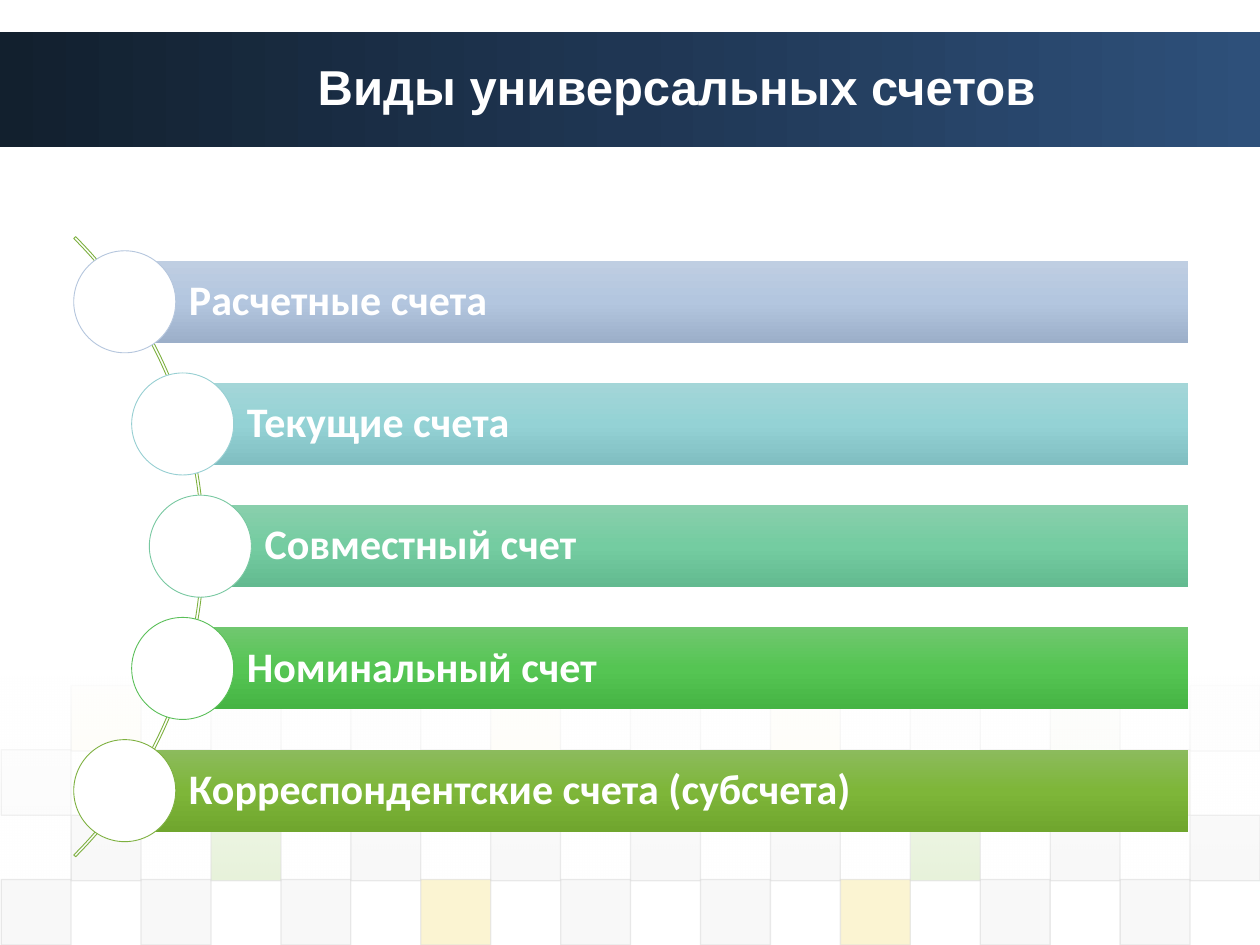
from pptx import Presentation
from pptx.dml.color import RGBColor
from pptx.enum.shapes import MSO_SHAPE as SHAPE
from pptx.enum.text import MSO_ANCHOR as ANCHOR, PP_ALIGN as ALIGN
from pptx.oxml import parse_xml
from pptx.oxml.ns import nsdecls, qn
from pptx.util import Inches, Pt

WHITE = RGBColor(0xFF, 0xFF, 0xFF)
GRAY = RGBColor(0xDD, 0xDD, 0xDD)
PALE = RGBColor(0xEA, 0xEA, 0xEA)
GREEN = RGBColor(0x8A, 0xC2, 0x46)
YELLOW = RGBColor(0xEF, 0xC8, 0x21)
OLIVE = RGBColor(0x7D, 0xB0, 0x3F)
HEADER = ["12202E", "1F3653", "2E507A"]

# Mosaic rows: top, first column, opacity, base colour, colours of special columns
MOSAIC = [
    (5.44, 1, 5, PALE, {1: YELLOW, 7: YELLOW, 9: GRAY, 11: YELLOW, 15: GREEN}),
    (5.95, 0, 10, GRAY, {8: GREEN, 16: YELLOW}),
    (6.47, 1, 20, GRAY, {3: GREEN, 13: GREEN}),
    (6.98, 0, 20, GRAY, {6: YELLOW, 12: YELLOW}),
]
COLUMN = 0.555

# Accounts: text, left of bar, gradient of bar, outline of circle
ACCOUNTS = [
    ("Расчетные счета", 0.99, ["BFCEE2", "B3C6DF", "9CAFC9"], RGBColor(0xB5, 0xC6, 0xDD)),
    ("Текущие счета", 1.45, ["A4D6D8", "94D2D5", "80BEC1"], RGBColor(0x97, 0xCF, 0xD2)),
    ("Совместный счет", 1.59, ["89CFAC", "74CCA1", "63BA90"], RGBColor(0x78, 0xC8, 0xA1)),
    ("Номинальный счет", 1.45, ["70C76F", "55C553", "46B444"], RGBColor(0x5A, 0xBF, 0x58)),
    ("Корреспондентские счета (субсчета)", 0.99, ["8CBB5D", "7EB639", "70A62E"], OLIVE),
]
BAR_TOP, BAR_STEP, BAR_HEIGHT, BAR_RIGHT = 2.07, 0.97, 0.65, 9.43
CIRCLE = 0.81


def add_shape(slide, kind, x, y, w, h, fill=None, line=None, width=0.5):
    s = slide.shapes.add_shape(kind, Inches(x), Inches(y), Inches(w), Inches(h))
    s.shadow.inherit = False
    if fill is None:
        s.fill.background()
    else:
        s.fill.solid()
        s.fill.fore_color.rgb = fill
    if line is None:
        s.line.fill.background()
    else:
        s.line.color.rgb = line
        s.line.width = Pt(width)
    return s


def set_gradient(s, colors, angle, alphas=None):
    alphas = alphas or [100] * len(colors)
    last = len(colors) - 1
    stops = "".join(
        f'<a:gs pos="{i * 100000 // last}"><a:srgbClr val="{c}">'
        f'<a:alpha val="{a * 1000}"/></a:srgbClr></a:gs>'
        for i, (c, a) in enumerate(zip(colors, alphas)))
    grad = parse_xml(f'<a:gradFill {nsdecls("a")} rotWithShape="1"><a:gsLst>{stops}</a:gsLst>'
                     f'<a:lin ang="{angle * 60000}" scaled="0"/></a:gradFill>')
    spPr = s.fill._xPr
    spPr.replace(spPr.find(qn("a:noFill")), grad)


def set_opacity(element, percent):
    color = element.find(qn("a:solidFill")).find(qn("a:srgbClr"))
    color.append(parse_xml(f'<a:alpha {nsdecls("a")} val="{percent * 1000}"/>'))


def set_text(s, text, align, font, margins):
    tf = s.text_frame
    frame = {"word_wrap": True, "vertical_anchor": ANCHOR.MIDDLE, **margins}
    for name, value in frame.items():
        setattr(tf, name, value)
    p = tf.paragraphs[0]
    p.alignment = align
    p.line_spacing = 0.9
    r = p.add_run()
    r.text = text
    r.font.color.rgb = WHITE
    for name, value in font.items():
        setattr(r.font, name, value)


def add_mosaic(slide):
    for top, first, opacity, base, special in MOSAIC:
        for col in range(first, 18, 2):
            s = add_shape(slide, SHAPE.RECTANGLE, 0.01 + col * COLUMN, top, COLUMN, 0.52,
                          special.get(col, base), GRAY, 0.75)
            set_opacity(s.fill._xPr, opacity)
            set_opacity(s.line._ln, 60)
    fade = add_shape(slide, SHAPE.RECTANGLE, 0, 5.37, 10, 1.62)
    set_gradient(fade, ["FFFFFF", "FFFFFF"], 90, [90, 0])


def add_header(slide):
    band = add_shape(slide, SHAPE.RECTANGLE, 0, 0.25, 10, 0.92)
    set_gradient(band, HEADER, 0)
    title = slide.shapes.add_textbox(Inches(1.33), Inches(0.25), Inches(8.08), Inches(0.92))
    set_text(title, "Виды универсальных счетов", ALIGN.CENTER,
             {"name": "Arial", "size": Pt(28), "bold": True}, {})


def add_arc(slide):
    arc = add_shape(slide, SHAPE.BLOCK_ARC, -5.34, 0.86, 6.96, 6.96, line=OLIVE)
    for i, value in enumerate((189, 27, 0.003)):
        arc.adjustments[i] = value


def add_account(slide, top, text, left, colors, outline):
    bar = add_shape(slide, SHAPE.RECTANGLE, left, top, BAR_RIGHT - left, BAR_HEIGHT)
    set_gradient(bar, colors, 90)
    set_text(bar, text, ALIGN.LEFT, {"name": "Calibri", "size": Pt(24), "bold": True},
             {"margin_left": Inches(0.51), "margin_right": Inches(0.07),
              "margin_top": Inches(0.07), "margin_bottom": Inches(0.07)})
    # The circle is centred on the left end of the bar
    add_shape(slide, SHAPE.OVAL, left - CIRCLE / 2, top + (BAR_HEIGHT - CIRCLE) / 2,
              CIRCLE, CIRCLE, WHITE, outline)


def main():
    prs = Presentation()
    prs.slide_width, prs.slide_height = Inches(10), Inches(7.5)
    slide = prs.slides.add_slide(prs.slide_layouts[6])
    # Background and title
    add_mosaic(slide)
    add_header(slide)
    # List of accounts along the arc
    add_arc(slide)
    for i, account in enumerate(ACCOUNTS):
        add_account(slide, BAR_TOP + i * BAR_STEP, *account)
    prs.save("out.pptx")


if __name__ == "__main__":
    main()
